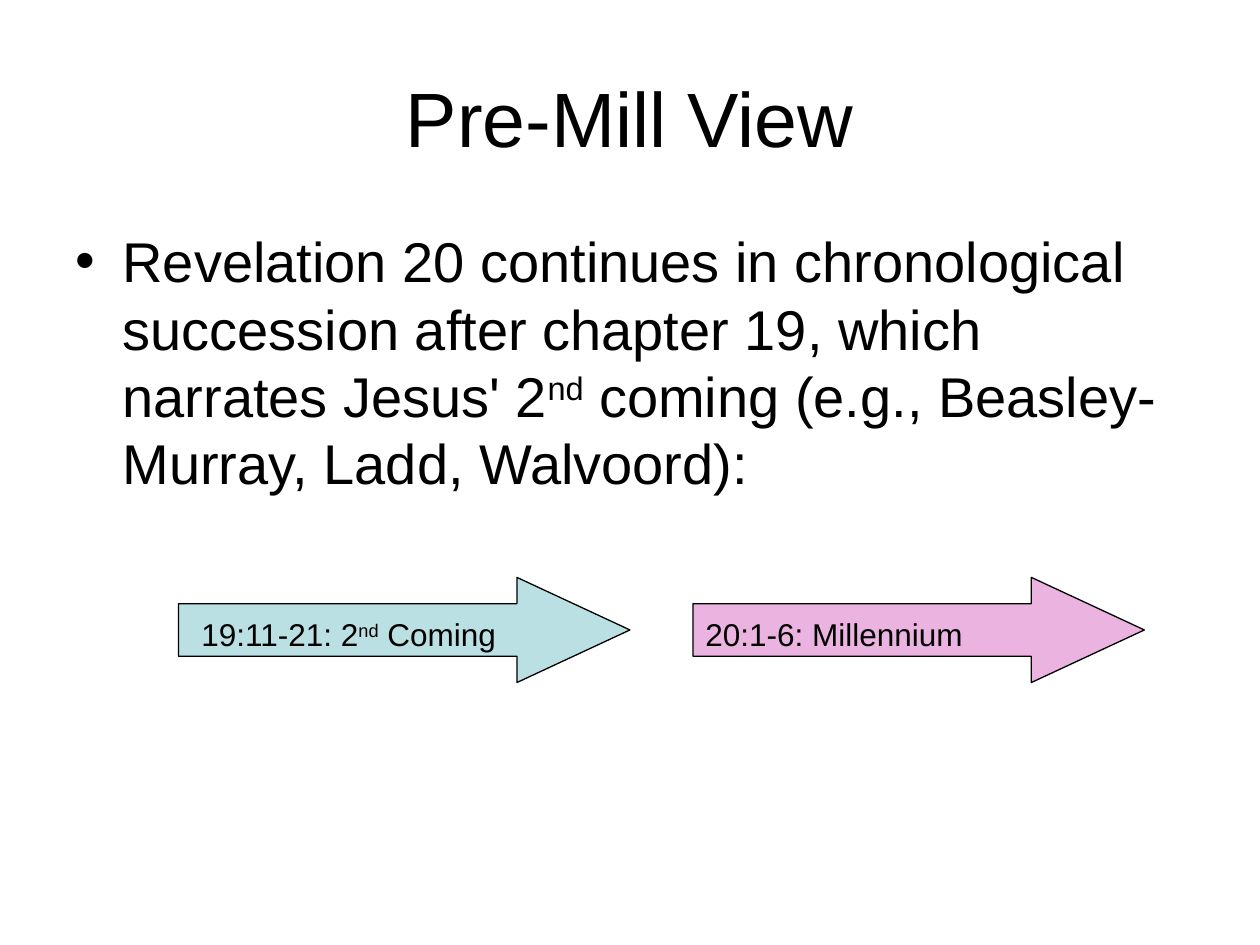
from lxml import etree
from pptx import Presentation
from pptx import util as u
from pptx.dml.color import RGBColor
from pptx.enum import shapes, text
from pptx.oxml.ns import qn

COLOURS = {"ink": "000000", "coming": "BBE0E3", "millennium": "EBB3E0"}


class SlideBuilder:
    """Hold the style and the current slide, and add its elements."""

    font = "Arial"

    def __init__(self, presentation):
        self.slide = presentation.slides.add_slide(presentation.slide_layouts[6])

    def colour(self, name):
        return RGBColor.from_string(COLOURS[name])

    def text(self, box, runs, size, before=0, bullet=False, frame_format=None, **paragraph_format):
        shape = self.slide.shapes.add_textbox(*map(u.Cm, box))
        frame = shape.text_frame
        for name, value in {"word_wrap": True, **(frame_format or {})}.items():
            setattr(frame, name, value)
        paragraph = frame.paragraphs[0]
        for name, value in paragraph_format.items():
            setattr(paragraph, name, value)
        properties = paragraph._p.get_or_add_pPr()
        if before:
            spacing = etree.SubElement(properties, qn("a:spcBef"))
            etree.SubElement(spacing, qn("a:spcPct"), val=str(before * 1000))
        if bullet:
            indent = u.Cm(0.95)
            properties.set("marL", str(indent))
            properties.set("indent", str(-indent))
            etree.SubElement(properties, qn("a:buFont"), typeface=self.font)
            etree.SubElement(properties, qn("a:buChar"), char="•")
        for words, raised in runs:
            run = paragraph.add_run()
            run.text = words
            font_format = {"name": self.font, "size": u.Pt(size)}
            for name, value in font_format.items():
                setattr(run.font, name, value)
            run.font.color.rgb = self.colour("ink")
            if raised:
                run.font._element.set("baseline", "30000")

    def arrow(self, box, fill):
        shape = self.slide.shapes.add_shape(shapes.MSO_SHAPE.RIGHT_ARROW, *map(u.Cm, box))
        shape.shadow.inherit = False
        shape.adjustments[0], shape.adjustments[1] = 0.5, 1.075
        shape.fill.solid()
        shape.fill.fore_color.rgb = self.colour(fill)
        shape.line.color.rgb = self.colour("ink")
        shape.line.width = u.Pt(0.75)


def main():
    presentation = Presentation()
    presentation.slide_width, presentation.slide_height = u.Cm(25.4), u.Cm(19.05)
    builder = SlideBuilder(presentation)
    builder.text(
        (1.27, 0.76, 22.86, 3.18), [("Pre-Mill View", False)], 44,
        frame_format={"vertical_anchor": text.MSO_ANCHOR.MIDDLE},
        alignment=text.PP_ALIGN.CENTER,
    )
    statement = [
        ("Revelation 20 continues in chronological succession after chapter 19, "
         "which narrates Jesus' 2", False),
        ("nd", True),
        (" coming (e.g., Beasley-Murray, Ladd, Walvoord):", False),
    ]
    builder.text((1.27, 4.45, 22.86, 12.57), statement, 32, before=20, bullet=True)

    events = [
        (3.6, "coming", 3.81, 7.41, [("19:11-21: 2", False), ("nd", True), (" Coming", False)]),
        (13.97, "millennium", 13.97, 7.83, [("20:1-6: Millennium", False)]),
    ]
    for left, fill, *_ in events:
        builder.arrow((left, 11.64, 9.1, 2.12), fill)
    for _, _, left, width, label in events:
        builder.text(
            (left, 12.28, width, 1.02), label, 18, before=50,
            frame_format={"auto_size": text.MSO_AUTO_SIZE.SHAPE_TO_FIT_TEXT},
        )
    presentation.save("out.pptx")


if __name__ == "__main__":
    main()
